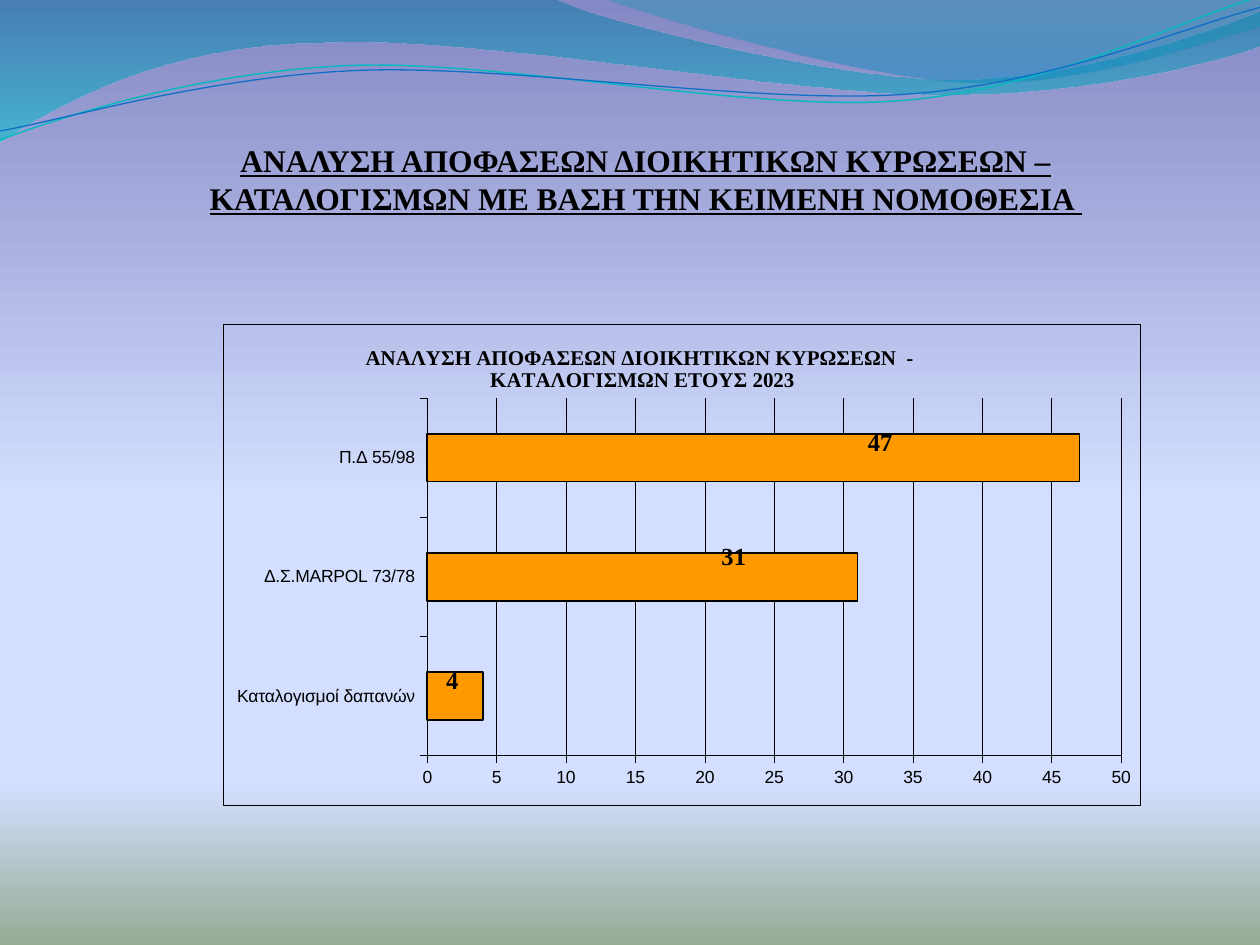
from dataclasses import dataclass
from math import cos, radians, sin
from lxml.etree import SubElement
from pptx import Presentation
from pptx.chart.data import CategoryChartData
from pptx.dml.color import RGBColor
from pptx.enum.chart import (XL_CHART_TYPE, XL_LABEL_POSITION,
                             XL_TICK_LABEL_POSITION, XL_TICK_MARK)
from pptx.enum.text import MSO_ANCHOR, PP_ALIGN
from pptx.oxml import parse_xml
from pptx.oxml.ns import nsdecls, qn
from pptx.util import Inches, Pt

# Chart extension that turns leader lines off
PLAIN = (f"<c:extLst {nsdecls('c')}>"
         '<c:ext uri="{CE6537A1-D6FC-4f65-9D91-7224C49458BB}" '
         'xmlns:c15="http://schemas.microsoft.com/office/drawing/2012/chart">'
         '<c15:showLeaderLines val="0"/></c:ext></c:extLst>')


@dataclass
class Theme:
    ink: str = "000000"
    bar: str = "FF9900"
    teal: str = "0AB8BF"
    blue: str = "0F6FC6"
    serif: str = "Times New Roman"
    sans: str = "Arial"
    head: int = 18
    label: int = 14
    title: int = 12
    axis: int = 10
    hair: float = 0.25
    # Gradient stops: position, colour, opacity (percent)
    sky: tuple = ((0, "8488C4", 100), (53, "D4DEFF", 100),
                  (83, "D4DEFF", 100), (100, "96AB94", 100))
    wave: tuple = ((0, "0074A1", 45), (100, "00C6CF", 55))
    crest: tuple = ((0, "00A1A9", 30), (80, "008BBF", 45))


def turn(point, pivot, angle):
    """Turn a point clockwise about a pivot."""
    a = radians(angle)
    x, y = point[0] - pivot[0], point[1] - pivot[1]
    return (pivot[0] + x * cos(a) - y * sin(a),
            pivot[1] + x * sin(a) + y * cos(a))


def place(node, index, size, modes=(), **spots):
    """Give a chart part a manual layout, in inches of the chart's size."""
    for old in node.findall(qn("c:layout")):
        node.remove(old)
    layout = parse_xml(f"<c:layout {nsdecls('c')}><c:manualLayout/></c:layout>")
    for mode, value in modes:
        SubElement(layout[0], qn(f"c:{mode}"), val=value)
    for key, value in spots.items():
        whole = size[0] if key in "xw" else size[1]
        SubElement(layout[0], qn(f"c:{key}"), val=str(value / whole))
    node.insert(index, layout)


class Deck:
    def __init__(self, theme):
        self.theme = theme
        self.file = Presentation()
        self.file.slide_width, self.file.slide_height = Inches(10), Inches(7.5)
        self.slide = self.file.slides.add_slide(self.file.slide_layouts[6])

    def blend(self, fill, root, stops):
        fill.gradient()
        fill.gradient_angle = 270
        ramp = root.find(".//" + qn("a:gsLst"))
        for old in list(ramp):
            ramp.remove(old)
        for spot, color, alpha in stops:
            stop = SubElement(ramp, qn("a:gs"), pos=str(spot * 1000))
            tint = SubElement(stop, qn("a:srgbClr"), val=color)
            if alpha < 100:
                SubElement(tint, qn("a:alpha"), val=str(alpha * 1000))

    def back(self, stops):
        self.blend(self.slide.background.fill, self.slide.element, stops)

    def pen(self, line, color, width):
        line.color.rgb = RGBColor.from_string(color)
        line.width = Pt(width)

    def type(self, font, name, size, bold=False):
        font.name, font.size, font.bold = name, Pt(size), bold
        font.color.rgb = RGBColor.from_string(self.theme.ink)

    def outline(self, start, parts, close, pivot=(0, 0), angle=0):
        """Draw lines (2 numbers) and cubic curves (6 numbers)."""
        knots = [start] + [part[i:i + 2] for part in parts
                           for i in range(0, len(part), 2)]
        points = [tuple(map(Inches, turn(k, pivot, -angle))) for k in knots]
        build = self.slide.shapes.build_freeform(*points[0])
        build.add_line_segments(points[1:], close=close)
        shape = build.convert_to_shape()
        shape.shadow.inherit = False
        shape.rotation = angle
        # Join each three segments of a curve into one Bézier
        legs = iter(list(shape.element.iter(qn("a:lnTo"))))
        for part in parts:
            leg = next(legs)
            if len(part) == 6:
                leg.addprevious(parse_xml(f"<a:cubicBezTo {nsdecls('a')}/>"))
                bend = leg.getprevious()
                for old in (leg, next(legs), next(legs)):
                    bend.append(old[0])
                    old.getparent().remove(old)
        return shape

    def area(self, start, parts, stops):
        shape = self.outline(start, parts, True)
        self.blend(shape.fill, shape.element, stops)
        shape.line.fill.background()

    def curve(self, start, parts, pivot, color, width):
        shape = self.outline(start, parts, False, pivot, -2.7)
        shape.fill.background()
        self.pen(shape.line, color, width)

    def text(self, words, box):
        frame = self.slide.shapes.add_textbox(*map(Inches, box)).text_frame
        frame.word_wrap = True
        frame.vertical_anchor = MSO_ANCHOR.BOTTOM
        frame.margin_left = frame.margin_right = frame.margin_bottom = 0
        frame.margin_top = Inches(0.05)
        para = frame.paragraphs[0]
        para.alignment = PP_ALIGN.CENTER
        run = para.add_run()
        run.text = words
        self.type(run.font, self.theme.serif, self.theme.head, True)
        run.font.underline = True

    def chart(self, title, rows, box):
        look, size = self.theme, box[2:]
        data = CategoryChartData()
        data.categories = [row[0] for row in rows]
        data.add_series("Series 1", [row[1] for row in rows])
        chart = self.slide.shapes.add_chart(
            XL_CHART_TYPE.BAR_CLUSTERED, *map(Inches, box), data).chart
        chart.has_legend = False
        self.type(chart.font, look.sans, look.axis)

        # Frame and plot area
        root = chart.element
        root.find(qn("c:chart")).addnext(parse_xml(
            f"<c:spPr {nsdecls('c', 'a')}><a:noFill/>"
            f'<a:ln w="{Pt(look.hair)}"><a:solidFill><a:srgbClr val="{look.ink}"/>'
            "</a:solidFill></a:ln></c:spPr>"))
        edges = (("xMode", "edge"), ("yMode", "edge"))
        place(root.find(".//" + qn("c:plotArea")), 0, size,
              (("layoutTarget", "inner"), *edges), x=1.62, y=0.59, w=5.51, h=2.84)

        # Title
        chart.has_title = True
        run = chart.chart_title.text_frame.paragraphs[0].add_run()
        run.text = title
        self.type(run.font, look.serif, look.title, True)
        place(root.find(".//" + qn("c:title")), 1, size, edges, x=1.1, y=0.13)

        # Axes
        for axis in (chart.category_axis, chart.value_axis):
            axis.major_tick_mark = XL_TICK_MARK.OUTSIDE
            axis.minor_tick_mark = XL_TICK_MARK.NONE
            self.type(axis.tick_labels.font, look.sans, look.axis)
            self.pen(axis.format.line, look.ink, look.hair)
        chart.category_axis.tick_label_position = XL_TICK_LABEL_POSITION.LOW
        scale = chart.value_axis
        scale.minimum_scale, scale.maximum_scale, scale.major_unit = 0, 50, 5
        scale.has_major_gridlines = True
        self.pen(scale.major_gridlines.format.line, look.ink, look.hair)

        # Bars and their labels
        plot = chart.plots[0]
        plot.gap_width, plot.vary_by_categories = 150, False
        bars = plot.series[0]
        bars.format.fill.solid()
        bars.format.fill.fore_color.rgb = RGBColor.from_string(look.bar)
        self.pen(bars.format.line, look.ink, 1)
        for index in range(len(rows)):
            label = bars.points[index].data_label
            self.type(label.font, look.serif, look.label, True)
            label.position = XL_LABEL_POSITION.OUTSIDE_END
        for node, row in zip(root.iter(qn("c:dLbl")), rows):
            place(node, 1, size, x=row[2], y=row[3])
        for node in root.iter(qn("c:showLeaderLines")):
            node.set("val", "0")
        root.find(".//" + qn("c:dLbls")).append(parse_xml(PLAIN))


def main():
    theme = Theme()
    deck = Deck(theme)

    # Background and waves
    deck.back(theme.sky)
    deck.area((0, -0.01), [
        (4.4, -0.01), (4.76, 0.17, 6.64, 0.63, 7.58, 0.63),
        (8.53, 0.63, 9.58, 0.26, 10, 0.09), (10.01, 0.36),
        (9.83, 0.44, 8.7, 0.76, 7.46, 0.75), (6.22, 0.75, 3.82, 0.28, 2.57, 0.34),
        (1.29, 0.35, 0.46, 0.83, -0.01, 1.13)], theme.wave)
    deck.area((4.79, -0.01), [
        (5.09, 0.11, 6.82, 0.62, 7.69, 0.65),
        (8.56, 0.69, 9.61, 0.32, 10, 0.21), (10, 0)], theme.crest)
    deck.curve((0, 1.11), [
        (0.48, 0.93, 1.58, 0.57, 2.77, 0.52), (3.95, 0.47, 5.93, 0.89, 7.13, 0.8),
        (8.33, 0.71, 9.38, 0.15, 9.98, -0.02)], (4.99, 0.58), theme.teal, 0.85)
    deck.curve((0, 1.04), [
        (0.47, 0.96, 1.64, 0.61, 2.83, 0.56), (4.03, 0.51, 5.97, 0.83, 7.17, 0.75),
        (8.36, 0.67, 9.41, 0.21, 10, 0.06)], (5, 0.59), theme.blue, 0.75)

    # Heading
    deck.text("ΑΝΑΛΥΣΗ ΑΠΟΦΑΣΕΩΝ ΔΙΟΙΚΗΤΙΚΩΝ ΚΥΡΩΣΕΩΝ – "
              "ΚΑΤΑΛΟΓΙΣΜΩΝ ΜΕ ΒΑΣΗ ΤΗΝ ΚΕΙΜΕΝΗ ΝΟΜΟΘΕΣΙΑ ",
              (0.91, 0.77, 8.43, 0.95))

    # Decisions by law: name, count, label shift across and down
    deck.chart("ΑΝΑΛΥΣΗ ΑΠΟΦΑΣΕΩΝ ΔΙΟΙΚΗΤΙΚΩΝ ΚΥΡΩΣΕΩΝ  -  ΚΑΤΑΛΟΓΙΣΜΩΝ ΕΤΟΥΣ 2023",
               [("Καταλογισμοί δαπανών", 4, -0.33, -0.12),
                ("Δ.Σ.MARPOL 73/78", 31, -1.12, -0.16),
                ("Π.Δ 55/98", 47, -1.72, -0.12)],
               (1.77, 2.57, 7.28, 3.82))
    deck.file.save("out.pptx")


if __name__ == "__main__":
    main()
